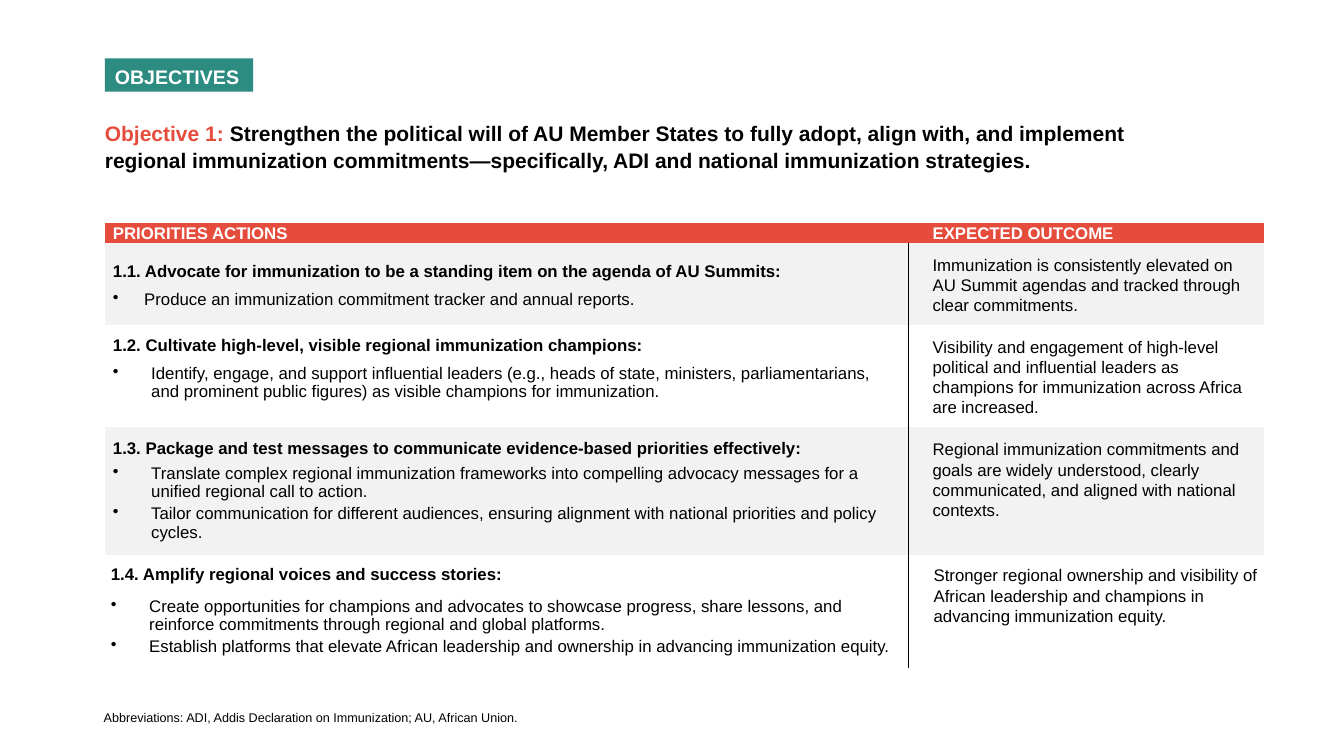
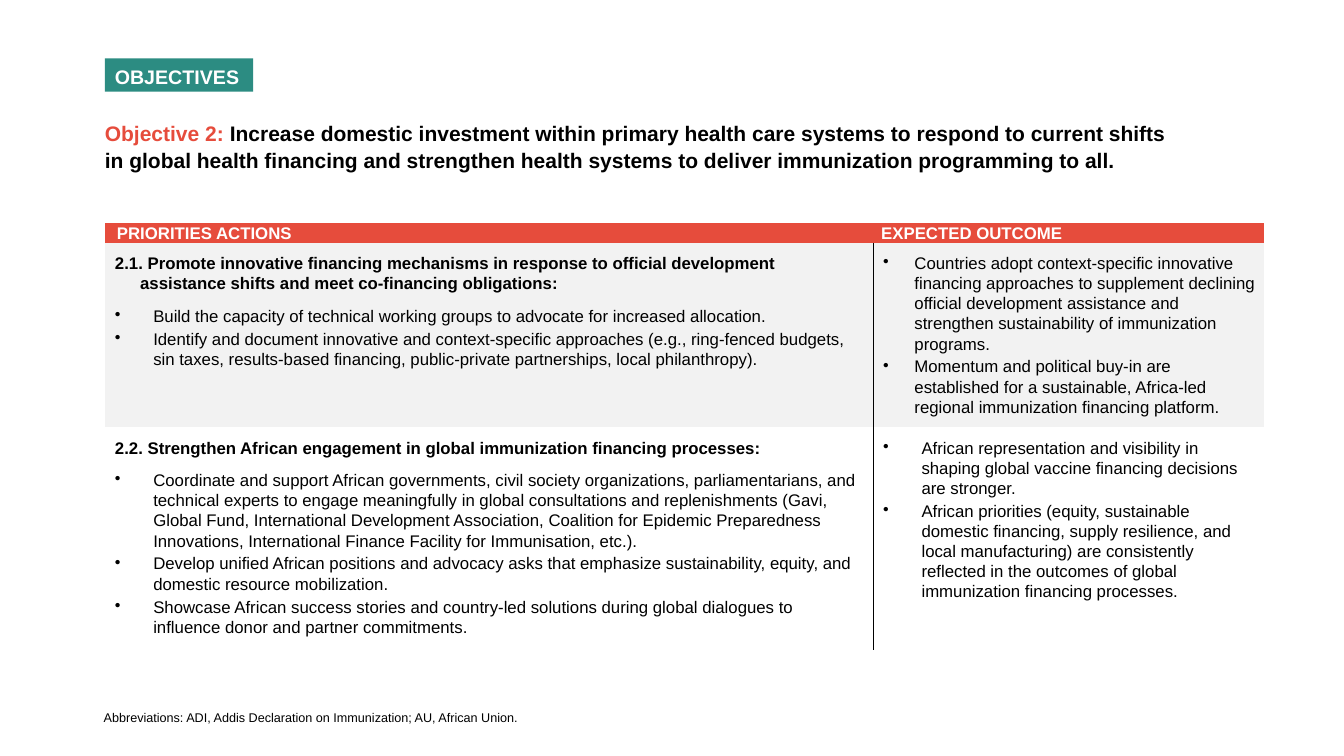
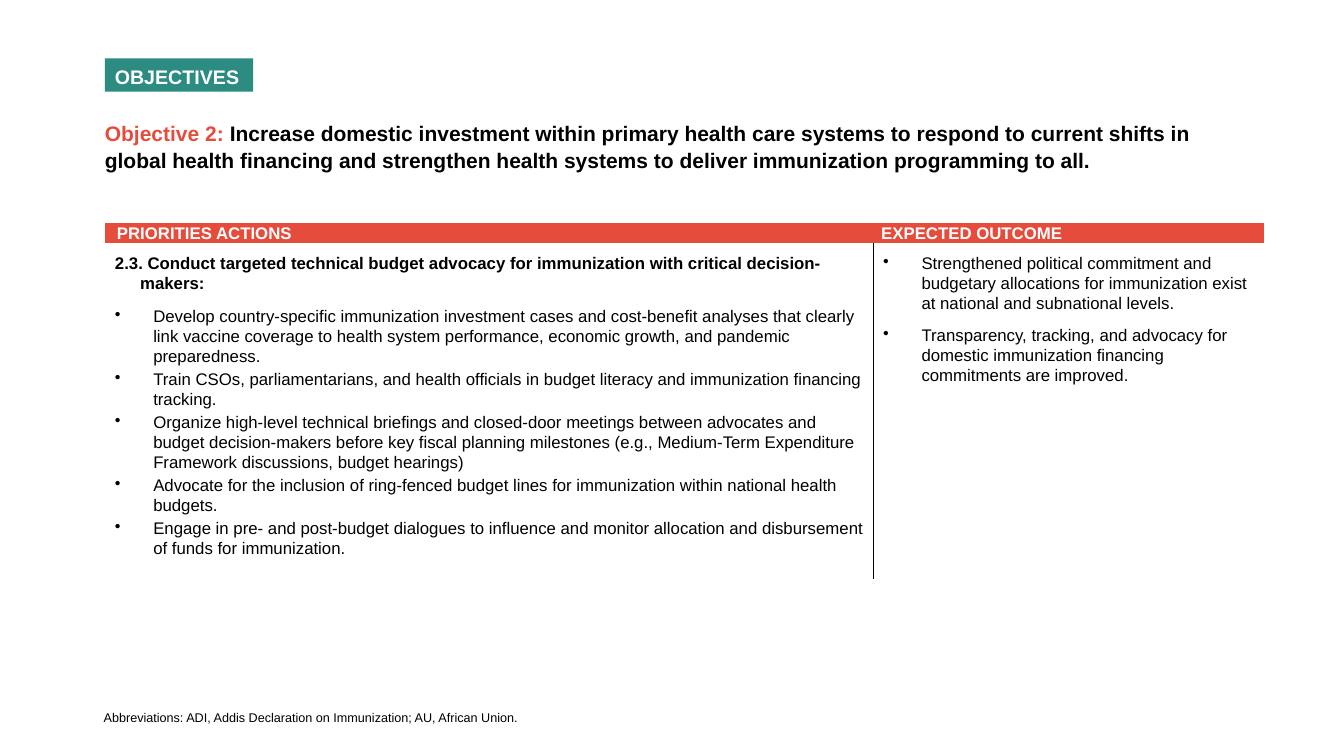
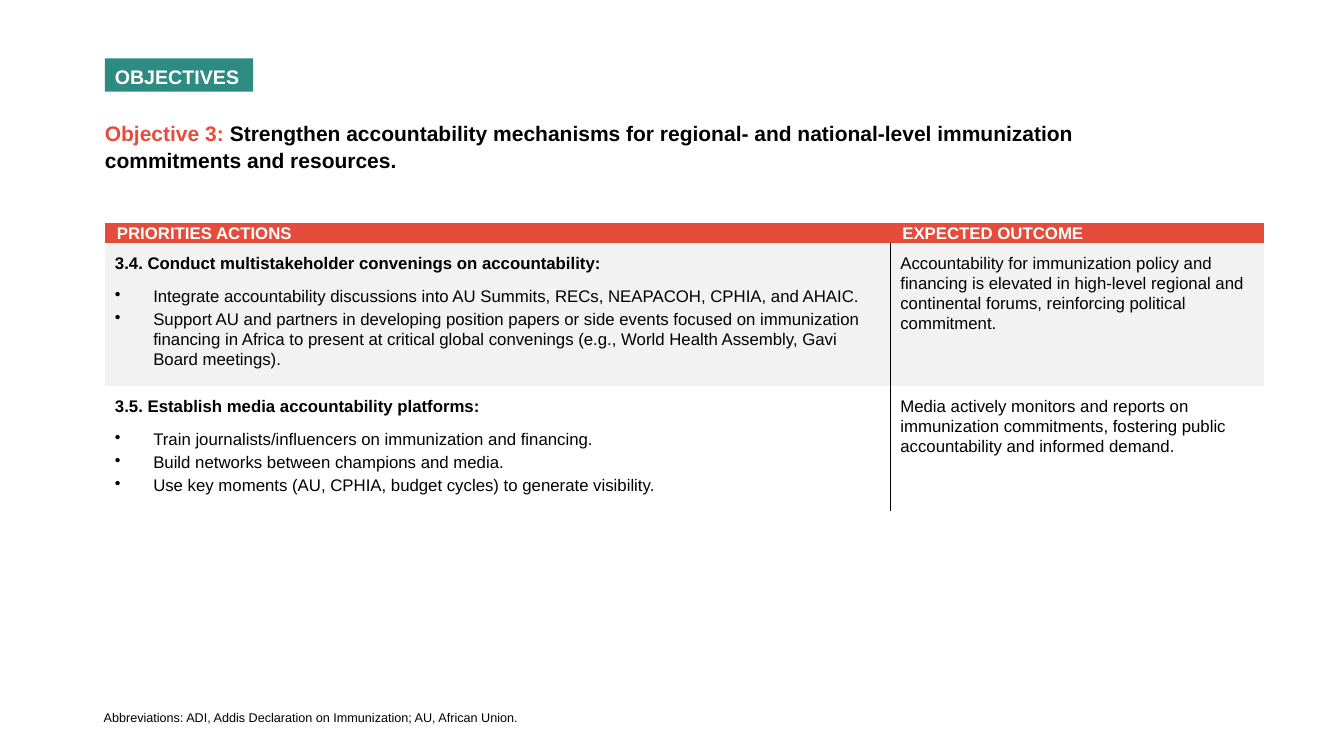
"""Builds four slides of immunization objectives, each with a table of actions and outcomes."""
from lxml import etree
from pptx import Presentation
from pptx import util as u
from pptx.dml import color
from pptx.enum import shapes, text
from pptx.oxml import ns

FONT = "Arial"
RED, TEAL, GREY, WHITE, BLACK = "E64C3C", "2C8C82", "F2F2F2", "FFFFFF", "000000"
LEFT, TABLE_TOP, TABLE_WIDTH, HEADER_HEIGHT = 1.04, 2.21, 11.5, 0.2
LINE = 1.07
NO_GRID_STYLE = "{2D5ABB26-0587-4C30-8999-92F81FD0307C}"
FOOTNOTE = "Abbreviations: ADI, Addis Declaration on Immunization; AU, African Union."
HEADERS = ("PRIORITIES ACTIONS", "EXPECTED OUTCOME")

BASE_LOOK = {
    "pads": ((0.1, 0.1, 0.08, 0), (0.1, 0.1, 0.08, 0)),
    "anchor": text.MSO_ANCHOR.TOP,
    "action_line": LINE,
    "heading_gap": (0, 8),
    "action_gap": (1, 1),
    "action_hang": 0.38,
    "outcome_gap": (1, 1),
    "outcome_hang": 0.38,
}

SLIDES = [
    {
        "label": "Objective 1: ",
        "title": "Strengthen the political will of AU Member States to fully adopt, align with, and "
                 "implement regional immunization commitments—specifically, ADI and national "
                 "immunization strategies.",
        "title_width": 10.94,
        "action_width": 7.97,
        "header_pads": (0.08, 0.24),
        "look": {"pads": ((0.08, 0.12, 0.28, 0.08), (0.24, 0.12, 0.12, 0.08)),
                 "action_line": 1.0, "heading_gap": (3, 3), "outcome_gap": (3, 3)},
        "rows": [
            {"height": 0.81, "fill": GREY,
             "heading": "1.1. Advocate for immunization to be a standing item on the agenda of AU Summits:",
             "actions": ["Produce an immunization commitment tracker and annual reports."],
             "outcomes": ["Immunization is consistently elevated on AU Summit agendas and tracked "
                          "through clear commitments."],
             "look": {"anchor": text.MSO_ANCHOR.MIDDLE, "action_gap": (3, 3), "action_hang": 0.31}},
            {"height": 1.02, "fill": WHITE,
             "heading": "1.2. Cultivate high-level, visible regional immunization champions:",
             "actions": ["Identify, engage, and support influential leaders (e.g., heads of state, "
                         "ministers, parliamentarians, and prominent public figures) as visible "
                         "champions for immunization."],
             "outcomes": ["Visibility and engagement of high-level political and influential leaders "
                          "as champions for immunization across Africa are increased."],
             "look": {"action_gap": (3, 3)}},
            {"height": 1.27, "fill": GREY,
             "heading": "1.3. Package and test messages to communicate evidence-based priorities effectively:",
             "actions": ["Translate complex regional immunization frameworks into compelling advocacy "
                         "messages for a unified regional call to action.",
                         "Tailor communication for different audiences, ensuring alignment with "
                         "national priorities and policy cycles."],
             "outcomes": ["Regional immunization commitments and goals are widely understood, clearly "
                          "communicated, and aligned with national contexts."]},
            {"height": 1.12, "fill": WHITE,
             "heading": "1.4. Amplify regional voices and success stories:",
             "actions": ["Create opportunities for champions and advocates to showcase progress, share "
                         "lessons, and reinforce commitments through regional and global platforms.",
                         "Establish platforms that elevate African leadership and ownership in "
                         "advancing immunization equity."],
             "outcomes": ["Stronger regional ownership and visibility of African leadership and "
                          "champions in advancing immunization equity."],
             "look": {"pads": ((0.06, 0.1, 0.06, 0), (0.25, 0.1, 0.06, 0)), "heading_gap": (0, 8)}},
        ],
    },
    {
        "label": "Objective 2: ",
        "title": "Increase domestic investment within primary health care systems to respond to current "
                 "shifts in global health financing and strengthen health systems to deliver "
                 "immunization programming to all.",
        "title_width": 10.77,
        "action_width": 7.62,
        "header_pads": (0.12, 0.08),
        "look": {},
        "rows": [
            {"height": 1.83, "fill": GREY,
             "heading": "2.1. Promote innovative financing mechanisms in response to official development "
                        "assistance shifts and meet co-financing obligations:",
             "actions": ["Build the capacity of technical working groups to advocate for increased allocation.",
                         "Identify and document innovative and context-specific approaches (e.g., "
                         "ring-fenced budgets, sin taxes, results-based financing, public-private "
                         "partnerships, local philanthropy)."],
             "outcomes": ["Countries adopt context-specific innovative financing approaches to supplement "
                          "declining official development assistance and strengthen sustainability of "
                          "immunization programs.",
                          "Momentum and political buy-in are established for a sustainable, Africa-led "
                          "regional immunization financing platform."],
             "look": {"outcome_hang": 0.31}},
            {"height": 2.21, "fill": WHITE,
             "heading": "2.2. Strengthen African engagement in global immunization financing processes:",
             "actions": ["Coordinate and support African governments, civil society organizations, "
                         "parliamentarians, and technical experts to engage meaningfully in global "
                         "consultations and replenishments (Gavi, Global Fund, International Development "
                         "Association, Coalition for Epidemic Preparedness Innovations, International "
                         "Finance Facility for Immunisation, etc.).",
                         "Develop unified African positions and advocacy asks that emphasize "
                         "sustainability, equity, and domestic resource mobilization.",
                         "Showcase African success stories and country-led solutions during global "
                         "dialogues to influence donor and partner commitments."],
             "outcomes": ["African representation and visibility in shaping global vaccine financing "
                          "decisions are stronger.",
                          "African priorities (equity, sustainable domestic financing, supply resilience, "
                          "and local manufacturing) are consistently reflected in the outcomes of global "
                          "immunization financing processes."]},
        ],
    },
    {
        "label": "Objective 2: ",
        "title": "Increase domestic investment within primary health care systems to respond to current "
                 "shifts in global health financing and strengthen health systems to deliver "
                 "immunization programming to all.",
        "title_width": 10.94,
        "action_width": 7.62,
        "header_pads": (0.12, 0.08),
        "look": {"pads": ((0.1, 0.1, 0.04, 0), (0.1, 0.1, 0.04, 0)), "outcome_gap": (0, 8)},
        "rows": [
            {"height": 3.33, "fill": WHITE,
             "heading": "2.3. Conduct targeted technical budget advocacy for immunization with critical "
                        "decision-makers:",
             "actions": ["Develop country-specific immunization investment cases and cost-benefit analyses "
                         "that clearly link vaccine coverage to health system performance, economic "
                         "growth, and pandemic preparedness.",
                         "Train CSOs, parliamentarians, and health officials in budget literacy and "
                         "immunization financing tracking.",
                         "Organize high-level technical briefings and closed-door meetings between "
                         "advocates and budget decision-makers before key fiscal planning milestones "
                         "(e.g., Medium-Term Expenditure Framework discussions, budget hearings)",
                         "Advocate for the inclusion of ring-fenced budget lines for immunization within "
                         "national health budgets.",
                         "Engage in pre- and post-budget dialogues to influence and monitor allocation "
                         "and disbursement of funds for immunization."],
             "outcomes": ["Strengthened political commitment and budgetary allocations for immunization "
                          "exist at national and subnational levels.",
                          "Transparency, tracking, and advocacy for domestic immunization financing "
                          "commitments are improved."]},
        ],
    },
    {
        "label": "Objective 3: ",
        "title": "Strengthen accountability mechanisms for regional- and national-level immunization "
                 "commitments and resources.",
        "title_width": 10.94,
        "action_width": 7.79,
        "header_pads": (0.12, 0.12),
        "look": {"pads": ((0.1, 0.1, 0.1, 0.1), (0.1, 0.1, 0.1, 0.1)), "outcome_gap": (0, 8)},
        "rows": [
            {"height": 1.42, "fill": GREY,
             "heading": "3.4. Conduct multistakeholder convenings on accountability:",
             "actions": ["Integrate accountability discussions into AU Summits, RECs, NEAPACOH, CPHIA, and AHAIC.",
                         "Support AU and partners in developing position papers or side events focused on "
                         "immunization financing in Africa to present at critical global convenings "
                         "(e.g., World Health Assembly, Gavi Board meetings)."],
             "outcomes": ["Accountability for immunization policy and financing is elevated in high-level "
                          "regional and continental forums, reinforcing political commitment."]},
            {"height": 1.24, "fill": WHITE,
             "heading": "3.5. Establish media accountability platforms:",
             "actions": ["Train journalists/influencers on immunization and financing.",
                         "Build networks between champions and media.",
                         "Use key moments (AU, CPHIA, budget cycles) to generate visibility."],
             "outcomes": ["Media actively monitors and reports on immunization commitments, fostering "
                          "public accountability and informed demand."]},
        ],
    },
]


def rgb(value):
    return color.RGBColor.from_string(value)


def paint(thing, value):
    thing.fill.solid()
    thing.fill.fore_color.rgb = rgb(value)


def style(para, size, ink=BLACK, bold=False, line=LINE, gap=(0, 0), hang=0, bullet=False):
    props = para._p.get_or_add_pPr()
    props.set("marL", str(u.Inches(hang)))
    props.set("indent", str(-u.Inches(hang)))
    if bullet:
        etree.SubElement(props, ns.qn("a:buChar")).set("char", "•")
    para.alignment = text.PP_ALIGN.LEFT
    para.line_spacing = line
    para.space_before, para.space_after = (u.Pt(points) for points in gap)
    para.font.name, para.font.size, para.font.bold = FONT, u.Pt(size), bold
    para.font.color.rgb = rgb(ink)


def set_pads(box, pads):
    box.margin_left, box.margin_top, box.margin_right, box.margin_bottom = map(u.Inches, pads)


def fill_cell(cell, fill, pads, anchor, entries):
    """Formats a cell and writes its entries, each a text with its paragraph style."""
    set_pads(cell, pads)
    cell.vertical_anchor = anchor
    paint(cell, fill)
    frame = cell.text_frame
    for index, (words, look) in enumerate(entries):
        para = frame.add_paragraph() if index else frame.paragraphs[0]
        para.text = words
        before, after = look.get("gap", (0, 0))
        style(para, 12, **{**look, "gap": (before if index else 0, after)})


def draw_border(cell, side):
    props = cell._tc.get_or_add_tcPr()
    line = etree.Element(ns.qn("a:" + side), w=str(u.Pt(0.25)))
    fill = etree.SubElement(line, ns.qn("a:solidFill"))
    etree.SubElement(fill, ns.qn("a:srgbClr"), val=BLACK)
    props.insert(0, line)


def add_objective_table(page, content):
    rows = content["rows"]
    heights = [HEADER_HEIGHT] + [row["height"] for row in rows]
    frame = page.shapes.add_table(len(heights), 2, u.Inches(LEFT), u.Inches(TABLE_TOP),
                                  u.Inches(TABLE_WIDTH), u.Inches(sum(heights)))
    table = frame.table
    table.first_row = table.horz_banding = False
    table._tbl.tblPr.find(ns.qn("a:tableStyleId")).text = NO_GRID_STYLE
    widths = (content["action_width"], TABLE_WIDTH - content["action_width"])
    for column, width in zip(table.columns, widths):
        column.width = u.Inches(width)
    for table_row, height in zip(table.rows, heights):
        table_row.height = u.Inches(height)

    for column, (words, pad) in enumerate(zip(HEADERS, content["header_pads"])):
        fill_cell(table.cell(0, column), RED, (pad, 0, 0.06, 0), text.MSO_ANCHOR.MIDDLE,
                  [(words, {"ink": WHITE, "bold": True})])

    for number, row in enumerate(rows, 1):
        look = {**BASE_LOOK, **content["look"], **row.get("look", {})}
        heading = {"bold": True, "line": look["action_line"], "gap": look["heading_gap"], "hang": 0.25}
        action = {"line": look["action_line"], "gap": look["action_gap"],
                  "hang": look["action_hang"], "bullet": True}
        outcome = {"gap": look["outcome_gap"]}
        if len(row["outcomes"]) > 1:
            outcome.update(hang=look["outcome_hang"], bullet=True)
        actions = [(row["heading"], heading)] + [(words, action) for words in row["actions"]]
        outcomes = [(words, outcome) for words in row["outcomes"]]
        left, right = table.cell(number, 0), table.cell(number, 1)
        fill_cell(left, row["fill"], look["pads"][0], look["anchor"], actions)
        fill_cell(right, row["fill"], look["pads"][1], text.MSO_ANCHOR.TOP, outcomes)
        draw_border(left, "lnR")
        draw_border(right, "lnL")


def add_title(page, content):
    title = page.shapes.title
    title.left, title.top = u.Inches(LEFT), u.Inches(1.13)
    title.width, title.height = u.Inches(content["title_width"]), u.Inches(0.62)
    frame = title.text_frame
    set_pads(frame, (0, 0.05, 0.1, 0.05))
    frame.word_wrap = True
    frame.auto_size = text.MSO_AUTO_SIZE.NONE
    frame.vertical_anchor = text.MSO_ANCHOR.TOP
    para = frame.paragraphs[0]
    label = para.add_run()
    label.text = content["label"]
    para.add_run().text = content["title"]
    style(para, 15, bold=True)
    label.font.color.rgb = rgb(RED)


def add_section_tag(page):
    tag = page.shapes.add_shape(shapes.MSO_SHAPE.RECTANGLE, u.Inches(LEFT), u.Inches(0.58),
                                u.Inches(1.47), u.Inches(0.33))
    tag.shadow.inherit = False
    paint(tag, TEAL)
    tag.line.fill.background()
    frame = tag.text_frame
    frame.word_wrap = True
    frame.vertical_anchor = text.MSO_ANCHOR.TOP
    frame.text = "OBJECTIVES"
    style(frame.paragraphs[0], 14, ink=WHITE, bold=True)


def add_footnote(page):
    box = page.shapes.add_textbox(u.Inches(0.93), u.Inches(6.99), u.Inches(8.64), u.Inches(0.25))
    frame = box.text_frame
    frame.word_wrap = True
    frame.text = FOOTNOTE
    style(frame.paragraphs[0], 9, line=1.0)


def main():
    deck = Presentation()
    deck.slide_width, deck.slide_height = u.Inches(13.33), u.Inches(7.5)
    for content in SLIDES:
        page = deck.slides.add_slide(deck.slide_layouts[5])
        add_objective_table(page, content)
        add_title(page, content)
        add_section_tag(page)
        add_footnote(page)
    deck.save("out.pptx")


if __name__ == "__main__":
    main()
